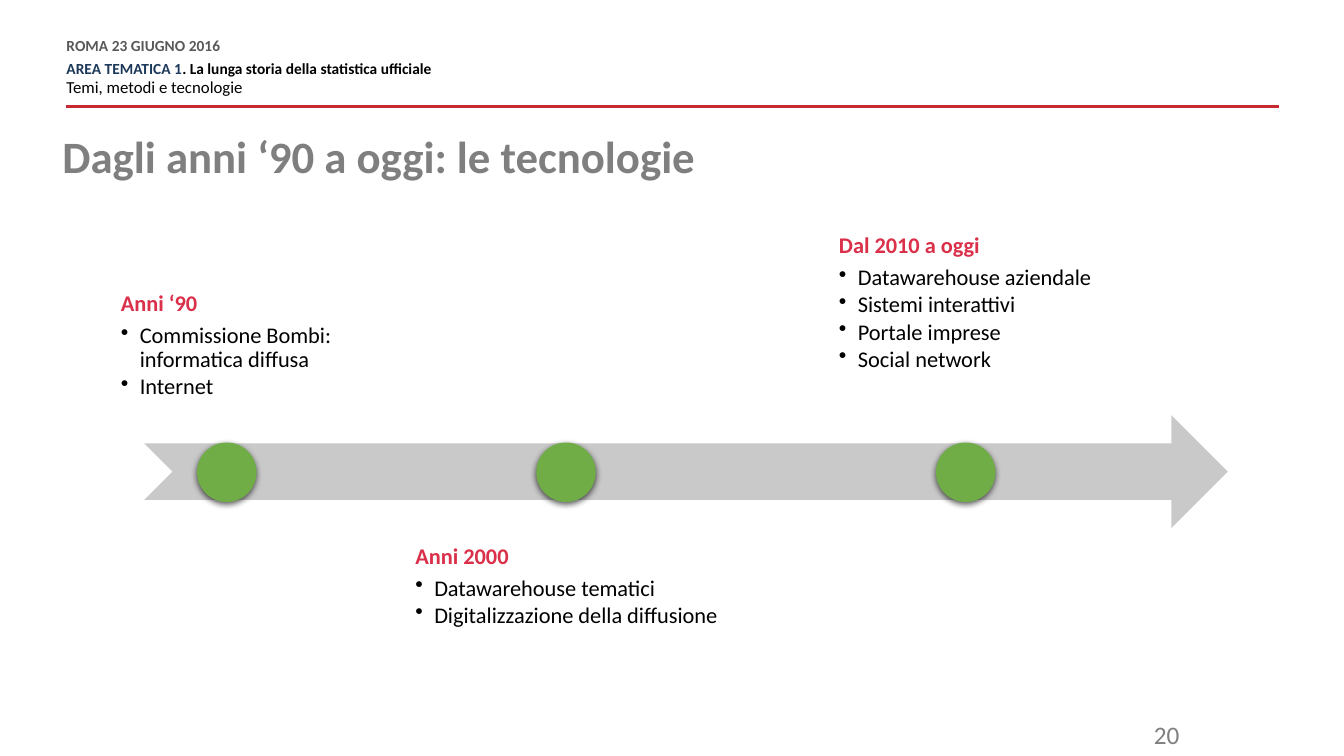
from dataclasses import dataclass

import pptx
import pptx.dml.color
import pptx.enum.shapes
import pptx.enum.text
import pptx.oxml
import pptx.oxml.ns
import pptx.util
from pptx.util import Pt

SHAPE = pptx.enum.shapes.MSO_SHAPE
ANCHOR = pptx.enum.text.MSO_ANCHOR
ALIGN = pptx.enum.text.PP_ALIGN

FONT = "Calibri"
GREY, NAVY, RED, BLACK = "7F7F7F", "1C385A", "DA304A", "000000"

PERIOD_LEFT, PERIOD_GAP, PERIOD_HEIGHT = 64.8, 10.1, 169.9
ABOVE_TOP, BELOW_TOP = 124.6, 380.2
INSET = 8.9
DOT_SIZE, DOT_TOP = 42.5, 316.1
BULLET_INDENT = 13.5


@dataclass
class Period:
    heading: str
    items: list[str]
    width: float
    text_inset: float
    above: bool = True
    bottom_inset: float = INSET


PERIODS = [
    Period("Anni ‘90", ["Commissione Bombi: informatica diffusa", "Internet"], 194.4, 21.6),
    Period("Anni 2000", ["Datawarehouse tematici", "Digitalizzazione della diffusione"],
           270, 27.4, above=False),
    Period("Dal 2010 a oggi",
           ["Datawarehouse aziendale", "Sistemi interattivi", "Portale imprese", "Social network"],
           280.8, 49.9, bottom_inset=INSET + 19.8),
]


def colour(value: str) -> pptx.dml.color.RGBColor:
    return pptx.dml.color.RGBColor.from_string(value)


def add_span(para, text: str, *, size: float, color: str, bold: bool = False) -> None:
    span = para.add_run()
    span.text = text
    span.font.name = FONT
    span.font.size = Pt(size)
    span.font.bold = bold
    span.font.color.rgb = colour(color)


def space(para, *, line=None, before: float = 0, after: float = 0) -> None:
    para.line_spacing = line
    para.space_before = Pt(before)
    para.space_after = Pt(after)


def set_frame(box, *, insets=(0, 0, 0, 0), anchor=ANCHOR.TOP):
    """Set insets (left, top, right, bottom) and return the text frame."""
    frame = box.text_frame
    frame.word_wrap = True
    frame.auto_size = pptx.enum.text.MSO_AUTO_SIZE.NONE
    frame.vertical_anchor = anchor
    (frame.margin_left, frame.margin_top,
     frame.margin_right, frame.margin_bottom) = map(Pt, insets)
    return frame


def add_box(page, left: float, top: float, width: float, height: float, **layout):
    box = page.shapes.add_textbox(Pt(left), Pt(top), Pt(width), Pt(height))
    return set_frame(box, **layout)


def add_shape(page, kind, left: float, top: float, width: float, height: float, fill: str):
    shape = page.shapes.add_shape(kind, Pt(left), Pt(top), Pt(width), Pt(height))
    shape.shadow.inherit = False
    shape.fill.solid()
    shape.fill.fore_color.rgb = colour(fill)
    shape.line.fill.background()
    return shape


def add_bullet(para) -> None:
    properties = para._p.get_or_add_pPr()
    properties.set("marL", str(Pt(BULLET_INDENT)))
    properties.set("indent", str(-Pt(BULLET_INDENT)))
    bullet = pptx.oxml.ns.qn("a:buChar")
    properties.append(properties.makeelement(bullet, {"char": "•"}))


def add_dot(page, center: float) -> None:
    dot = add_shape(page, SHAPE.OVAL, center - DOT_SIZE / 2, DOT_TOP, DOT_SIZE, DOT_SIZE, "70AD47")
    effects = dot._element.spPr.find(pptx.oxml.ns.qn("a:effectLst"))
    effects.append(pptx.oxml.parse_xml(
        f'<a:outerShdw {pptx.oxml.ns.nsdecls("a")} blurRad="{Pt(4.5)}" dist="{Pt(1.5)}" '
        'dir="5400000" algn="ctr" rotWithShape="0">'
        '<a:srgbClr val="000000"><a:alpha val="63000"/></a:srgbClr></a:outerShdw>'))


def add_period(page, period: Period, left: float) -> None:
    frame = add_box(page, left, ABOVE_TOP if period.above else BELOW_TOP,
                    period.width, PERIOD_HEIGHT,
                    insets=(period.text_inset, INSET, INSET, period.bottom_inset),
                    anchor=ANCHOR.BOTTOM if period.above else ANCHOR.TOP)
    heading = frame.paragraphs[0]
    space(heading, line=0.9, after=5.6)
    add_span(heading, period.heading, size=16, color=RED, bold=True)
    for item in period.items:
        para = frame.add_paragraph()
        add_bullet(para)
        space(para, line=0.9, after=2.2)
        add_span(para, item, size=16, color=BLACK)
    add_dot(page, left + period.width / 2)


def add_header(page) -> None:
    rule = page.shapes.add_connector(pptx.enum.shapes.MSO_CONNECTOR.STRAIGHT,
                                     Pt(47.5), Pt(76.3), Pt(913.7), Pt(76.3))
    rule.line.color.rgb = colour("C72A31")
    rule.line.width = Pt(2)
    properties = rule._element.spPr
    properties.append(properties.makeelement(pptx.oxml.ns.qn("a:effectLst"), {}))

    frame = add_box(page, 47.5, 28.1, 600.5, 42.5)
    place = frame.paragraphs[0]
    space(place, line=Pt(10.8), after=6)
    add_span(place, "ROMA 23 GIUGNO 2016", size=11, color="595959", bold=True)
    area = frame.add_paragraph()
    space(area, line=Pt(10.8))
    add_span(area, "AREA TEMATICA 1", size=11, color=NAVY, bold=True)
    add_span(area, ". La lunga storia della statistica ufficiale", size=11, color=BLACK, bold=True)
    topic = frame.add_paragraph()
    space(topic, line=Pt(10.8), before=3, after=6)
    add_span(topic, "Temi, metodi e tecnologie", size=12, color=BLACK)


def add_title(page) -> None:
    title = page.shapes.title
    title.left, title.top, title.width, title.height = map(Pt, (44.6, 90, 871.9, 41))
    para = set_frame(title, anchor=ANCHOR.BOTTOM).paragraphs[0]
    para.alignment = ALIGN.LEFT
    space(para, line=0.9)
    add_span(para, "Dagli anni ‘90 a oggi: le tecnologie", size=32, color=GREY, bold=True)


def add_page_number(page) -> None:
    frame = add_box(page, 633.6, 510.5, 216, 28.8, insets=(7.2, 3.6, 7.2, 3.6))
    para = frame.paragraphs[0]
    para.alignment = ALIGN.RIGHT
    add_span(para, "20", size=18, color=GREY)


def main() -> None:
    deck = pptx.Presentation()
    deck.slide_width, deck.slide_height = Pt(960), Pt(540)
    page = deck.slides.add_slide(deck.slide_layouts.get_by_name("Title Only"))
    add_header(page)
    add_title(page)
    add_page_number(page)
    add_shape(page, SHAPE.NOTCHED_RIGHT_ARROW, 103, 296.6, 774, 80.6, "C9C9C9")
    left = PERIOD_LEFT
    for period in PERIODS:
        add_period(page, period, left)
        left += period.width + PERIOD_GAP
    deck.save("out.pptx")


if __name__ == "__main__":
    main()
